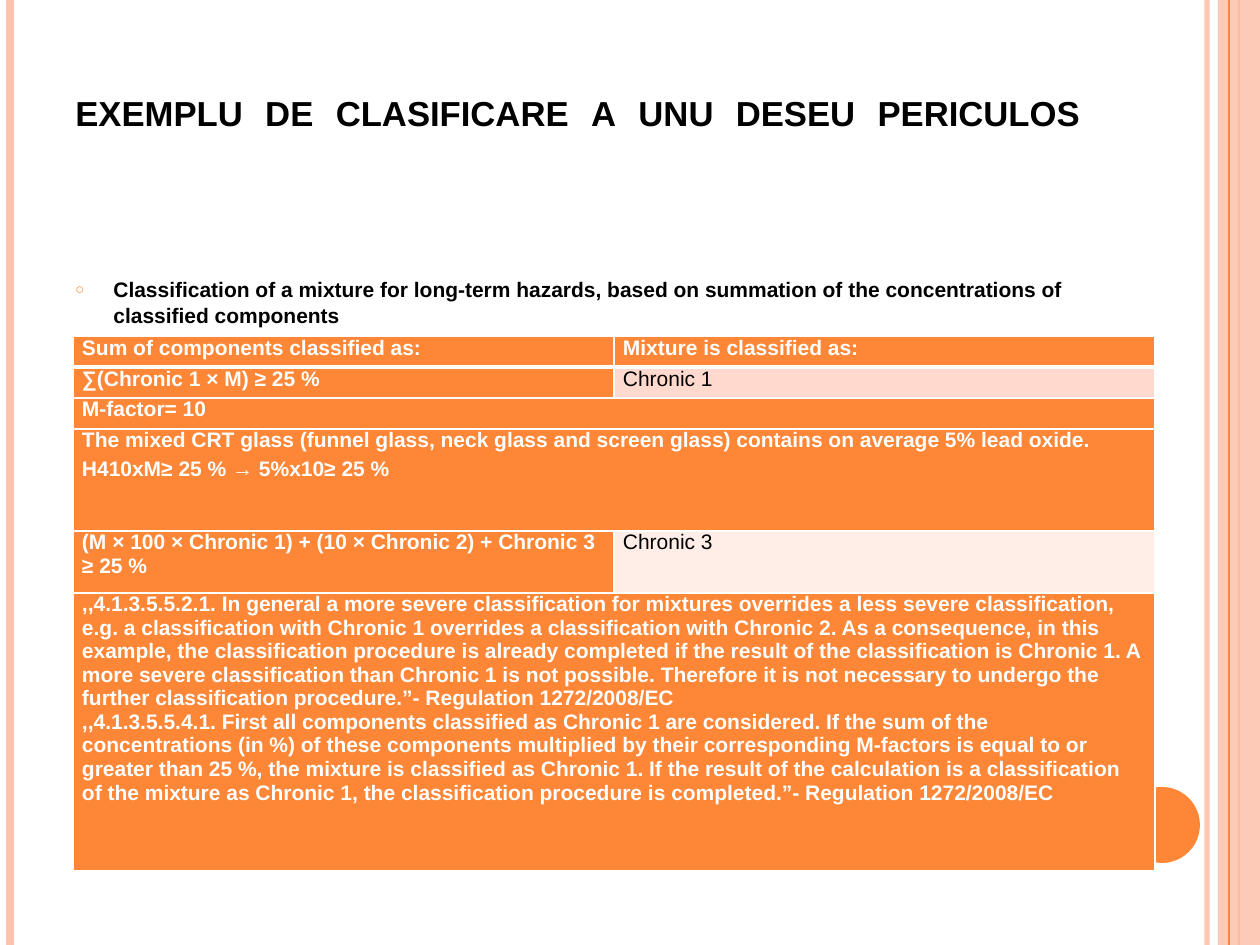
"""Build a slide on classifying a hazardous waste mixture."""
from dataclasses import dataclass

import lxml.etree
import pptx
import pptx.dml.color
import pptx.enum.shapes
import pptx.enum.text
import pptx.oxml
import pptx.oxml.ns
import pptx.util

PX = 914400 // 126
FONT = "Arial"
BLACK = pptx.dml.color.RGBColor(0x00, 0x00, 0x00)
WHITE = pptx.dml.color.RGBColor(0xFF, 0xFF, 0xFF)
ORANGE = pptx.dml.color.RGBColor(0xFE, 0x86, 0x37)
PEACH = pptx.dml.color.RGBColor(0xFE, 0xC3, 0xAE)
PINK = pptx.dml.color.RGBColor(0xFF, 0xD9, 0xCE)
PALE = pptx.dml.color.RGBColor(0xFF, 0xED, 0xE8)
JUSTIFY = pptx.enum.text.PP_ALIGN.JUSTIFY
SHAPE = pptx.enum.shapes.MSO_SHAPE


@dataclass
class Stripe:
    x: int
    color: pptx.dml.color.RGBColor
    points: float
    alpha: int = 100


@dataclass
class Entry:
    paragraphs: tuple[str, ...]
    fill: pptx.dml.color.RGBColor = ORANGE
    color: pptx.dml.color.RGBColor = WHITE
    bold: bool = True
    after: int = 0


@dataclass
class Row:
    height: int
    entries: tuple[Entry, ...]


BACK_STRIPES = (Stripe(1207, PEACH, 3, 93), Stripe(10, PEACH, 4.5), Stripe(1239, ORANGE, 1.5))
FRONT_STRIPE = Stripe(1229, ORANGE, 0.75)
ROWS = (
    Row(31, (Entry(("Sum of components classified as:",)), Entry(("Mixture is classified as:",)))),
    Row(31, (Entry(("∑(Chronic 1 × M) ≥ 25 %",)), Entry(("Chronic 1",), PINK, BLACK, False))),
    Row(31, (Entry(("M-factor= 10",)),)),
    Row(102, (Entry((
        "The mixed CRT glass (funnel glass, neck glass and screen glass) contains on average 5% lead oxide.",
        "H410xM≥ 25 % → 5%x10≥ 25 %"), after=3),)),
    Row(62, (Entry(("(M × 100 × Chronic 1) + (10 × Chronic 2) + Chronic 3 ≥ 25 %",)),
             Entry(("Chronic 3",), PALE, BLACK, False))),
    Row(278, (Entry((
        ",,4.1.3.5.5.2.1. In general a more severe classification for mixtures overrides a less severe "
        "classification, e.g. a classification with Chronic 1 overrides a classification with Chronic 2. "
        "As a consequence, in this example, the classification procedure is already completed if the result "
        "of the classification is Chronic 1. A more severe classification than Chronic 1 is not possible. "
        "Therefore it is not necessary to undergo the further classification procedure.”- "
        "Regulation 1272/2008/EC",
        ",,4.1.3.5.5.4.1. First all components classified as Chronic 1 are considered. If the sum of the "
        "concentrations (in %) of these components multiplied by their corresponding M-factors is equal to "
        "or greater than 25 %, the mixture is classified as Chronic 1. If the result of the calculation is "
        "a classification of the mixture as Chronic 1, the classification procedure is completed.”- "
        "Regulation 1272/2008/EC")),)),
)


def add_xml(parent, tag: str, **attributes: str):
    """Append a drawing element and return it."""
    return lxml.etree.SubElement(parent, pptx.oxml.ns.qn(tag), attributes)


def set_alpha(element, percent: int) -> None:
    """Make the first colour of an element partly transparent."""
    color = next(element.iter(pptx.oxml.ns.qn("a:srgbClr")))
    add_xml(color, "a:alpha", val=str(percent * 1000))


def write_text(para, text: str, *, size: float = 12, color=BLACK, bold: bool = True,
               after: int = 0, align=None):
    """Write one formatted run into a paragraph and return the run."""
    para.space_after = pptx.util.Pt(after)
    para.alignment = align
    span = para.add_run()
    span.text = text
    span.font.name = FONT
    span.font.size = pptx.util.Pt(size)
    span.font.bold = bold
    span.font.color.rgb = color
    return span


def add_stripe(page, stripe: Stripe) -> None:
    """Draw a vertical line over the full slide height."""
    line = page.shapes.add_connector(
        pptx.enum.shapes.MSO_CONNECTOR.STRAIGHT, stripe.x * PX, 0, stripe.x * PX, 945 * PX)
    line.line.color.rgb = stripe.color
    line.line.width = pptx.util.Pt(stripe.points)
    if stripe.alpha < 100:
        set_alpha(line.line._ln, stripe.alpha)
    add_xml(line._element.spPr, "a:effectLst")


def add_block(page, kind, x: int, y: int, width: int, height: int, color):
    """Draw a filled shape without outline or shadow."""
    block = page.shapes.add_shape(kind, x * PX, y * PX, width * PX, height * PX)
    block.fill.solid()
    block.fill.fore_color.rgb = color
    block.line.fill.background()
    block.shadow.inherit = False
    return block


def add_text_frame(page, x: int, y: int, width: int, height: int):
    """Add a wrapping text box and return its frame."""
    box = page.shapes.add_textbox(x * PX, y * PX, width * PX, height * PX)
    box.text_frame.word_wrap = True
    return box.text_frame


def add_title(page) -> None:
    """Add the justified title, whose line break stretches the line."""
    frame = add_text_frame(page, 63, 38, 1029, 157)
    frame.vertical_anchor = pptx.enum.text.MSO_ANCHOR.BOTTOM
    frame.margin_bottom = 24 * PX
    para = frame.paragraphs[0]
    span = write_text(para, "EXEMPLU DE CLASIFICARE A UNU DESEU PERICULOS", size=19.8, align=JUSTIFY)
    span.font._element.set("cap", "small")
    para.add_line_break()


def add_body(page) -> None:
    """Add the bulleted introduction."""
    frame = add_text_frame(page, 63, 220, 1029, 672)
    frame.margin_top = 57 * PX
    para = frame.paragraphs[0]
    write_text(para, "Classification of a mixture for long-term hazards, based on summation of the "
                     "concentrations of classified components")
    properties = para._p.get_or_add_pPr()
    properties.set("marL", str(38 * PX))
    properties.set("indent", str(-38 * PX))
    add_xml(add_xml(properties, "a:buClr"), "a:srgbClr", val=str(ORANGE))
    add_xml(properties, "a:buSzPct", val="70000")
    add_xml(properties, "a:buFont", typeface=FONT)
    add_xml(properties, "a:buChar", char="○")


def style_cell(cell, row_index: int, fill) -> None:
    """Give a cell its margins, white borders and fill."""
    cell.margin_left = cell.margin_right = 9 * PX
    cell.margin_top = cell.margin_bottom = 0
    properties = cell._tc.get_or_add_tcPr()
    for side in "LRTB":
        thick = (side, row_index) in (("B", 0), ("T", 1))
        border = add_xml(properties, f"a:ln{side}", w=str(pptx.util.Pt(3 if thick else 1)))
        add_xml(add_xml(border, "a:solidFill"), "a:srgbClr", val=str(WHITE))
    cell.fill.solid()
    cell.fill.fore_color.rgb = fill


def add_classification_table(page) -> None:
    """Add the table; a row with a single entry spans both columns."""
    height = sum(row.height for row in ROWS)
    table = page.shapes.add_table(len(ROWS), 2, 73 * PX, 336 * PX, 1082 * PX, height * PX).table
    for index, row in enumerate(ROWS):
        table.rows[index].height = row.height * PX
        if len(row.entries) == 1:
            table.cell(index, 0).merge(table.cell(index, 1))
        for column in range(2):
            style_cell(table.cell(index, column), index, row.entries[min(column, len(row.entries) - 1)].fill)
        for column, entry in enumerate(row.entries):
            frame = table.cell(index, column).text_frame
            for number, text in enumerate(entry.paragraphs):
                para = frame.add_paragraph() if number else frame.paragraphs[0]
                write_text(para, text, color=entry.color, bold=entry.bold, after=entry.after)


def main() -> None:
    """Build and save the deck."""
    deck = pptx.Presentation()
    deck.slide_width, deck.slide_height = 1260 * PX, 945 * PX
    page = deck.slides.add_slide(deck.slide_layouts[6])
    for stripe in BACK_STRIPES:
        add_stripe(page, stripe)
    band = add_block(page, SHAPE.RECTANGLE, 1218, 0, 42, 945, PEACH)
    set_alpha(band._element.spPr, 87)
    add_stripe(page, FRONT_STRIPE)
    add_block(page, SHAPE.OVAL, 1124, 787, 76, 76, ORANGE)
    add_title(page)
    add_body(page)
    add_classification_table(page)
    deck.save("out.pptx")


if __name__ == "__main__":
    main()
